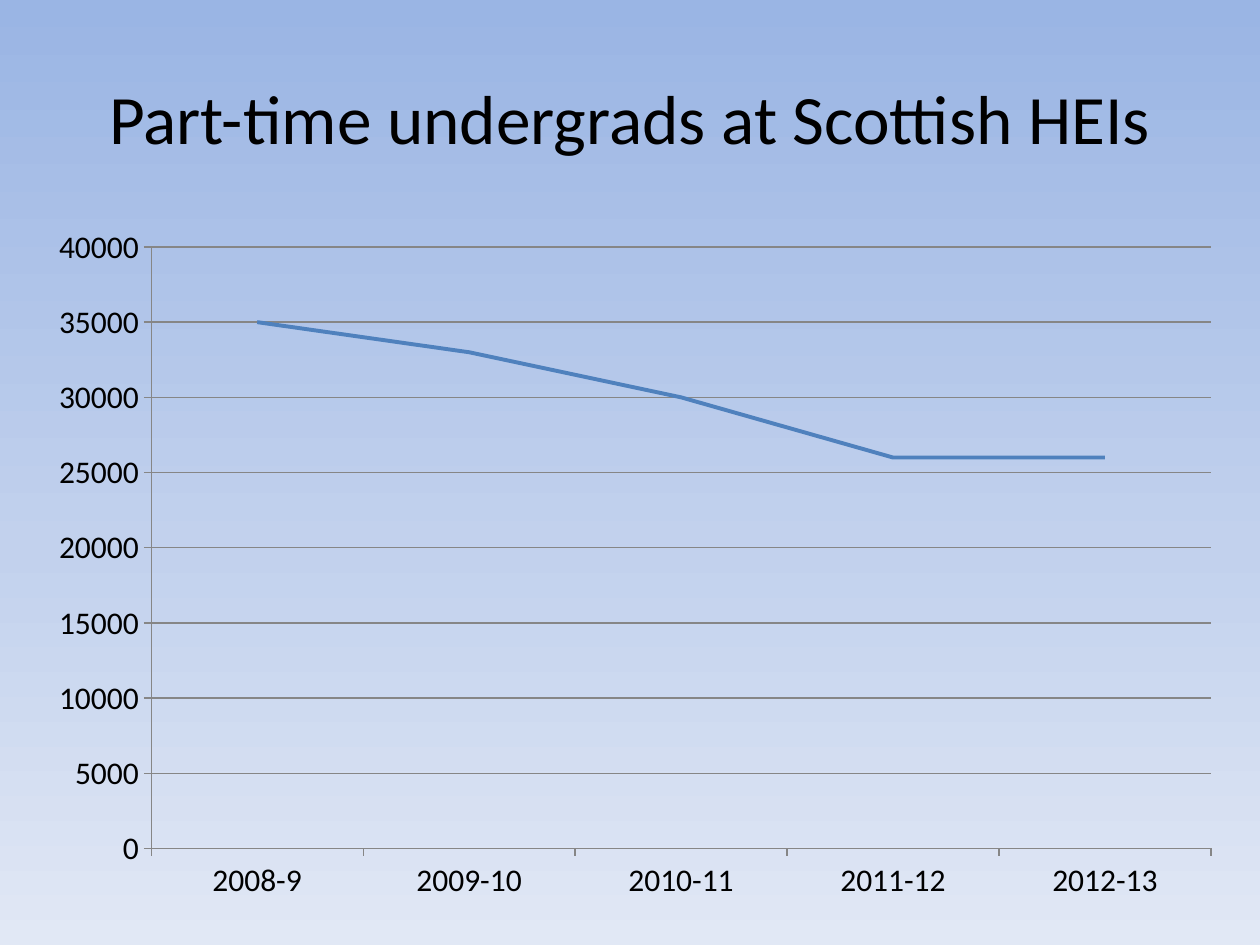
from copy import deepcopy
from pptx import Presentation, util as u
from pptx.chart.data import CategoryChartData
from pptx.dml.color import RGBColor
from pptx.enum import chart as ch, text
from pptx.oxml.ns import qn

HEAD = "Part-time undergrads at Scottish HEIs"
YEARS = ["2008-9", "2009-10", "2010-11", "2011-12", "2012-13"]
COUNTS = [35000, 33000, 30000, 26000, 26000]
STOPS = [(0, "top"), (0.58, "mid"), (1, "base")]
HUES = {"top": "9AB5E4", "mid": "C2D1ED", "base": "E1E8F5",
        "text": "000000", "line": "4F81BD", "grid": "868686"}
BOXES = {"title": (63, 38, 1134, 157), "chart": (35, 214, 1200, 699)}
FACE = "Calibri"
SCALE = 914400 / 126


def px(n):
    return u.Emu(round(n * SCALE))


def hue(name):
    return RGBColor.from_string(HUES[name])


def style(font, size):
    font.name, font.size = FACE, u.Pt(size)
    font.color.rgb = hue("text")


def paint(slide):
    fill = slide.background.fill
    fill.gradient()
    fill.gradient_angle = 270
    row = slide.element.find(".//" + qn("a:gsLst"))
    row.append(deepcopy(row[0]))
    for stop, (pos, name) in zip(fill.gradient_stops, STOPS):
        stop.position = pos
        stop.color.rgb = hue(name)


def add_title(slide):
    title = slide.shapes.title
    title.left, title.top, title.width, title.height = map(px, BOXES["title"])
    frame = title.text_frame
    frame.text = HEAD
    frame.vertical_anchor = text.MSO_ANCHOR.MIDDLE
    para = frame.paragraphs[0]
    para.alignment = text.PP_ALIGN.CENTER
    style(para.runs[0].font, 39.6)


def add_graph(slide):
    data = CategoryChartData(number_format="General")
    data.categories = YEARS
    data.add_series("Series 1", COUNTS)
    graph = slide.shapes.add_chart(
        ch.XL_CHART_TYPE.LINE, *map(px, BOXES["chart"]), data).chart
    graph.has_legend = graph.has_title = False
    style(graph.font, 18)
    plot = graph.plots[0]
    plot.vary_by_categories = False
    line = plot.series[0]
    line.smooth = False
    line.marker.style = ch.XL_MARKER_STYLE.NONE
    line.format.line.color.rgb = hue("line")
    line.format.line.width = u.Pt(2.25)
    rise = graph.value_axis
    rise.minimum_scale, rise.maximum_scale, rise.major_unit = 0, 40000, 5000
    rise.has_major_gridlines = True
    for axis in (graph.category_axis, rise):
        axis.major_tick_mark = ch.XL_TICK_MARK.OUTSIDE
    for part in (graph.category_axis, rise, rise.major_gridlines):
        part.format.line.color.rgb = hue("grid")
        part.format.line.width = u.Pt(0.75)


def main():
    deck = Presentation()
    deck.slide_width, deck.slide_height = px(1260), px(945)
    slide = deck.slides.add_slide(deck.slide_layouts[5])
    paint(slide)
    add_title(slide)
    add_graph(slide)
    deck.save("out.pptx")


if __name__ == "__main__":
    main()
